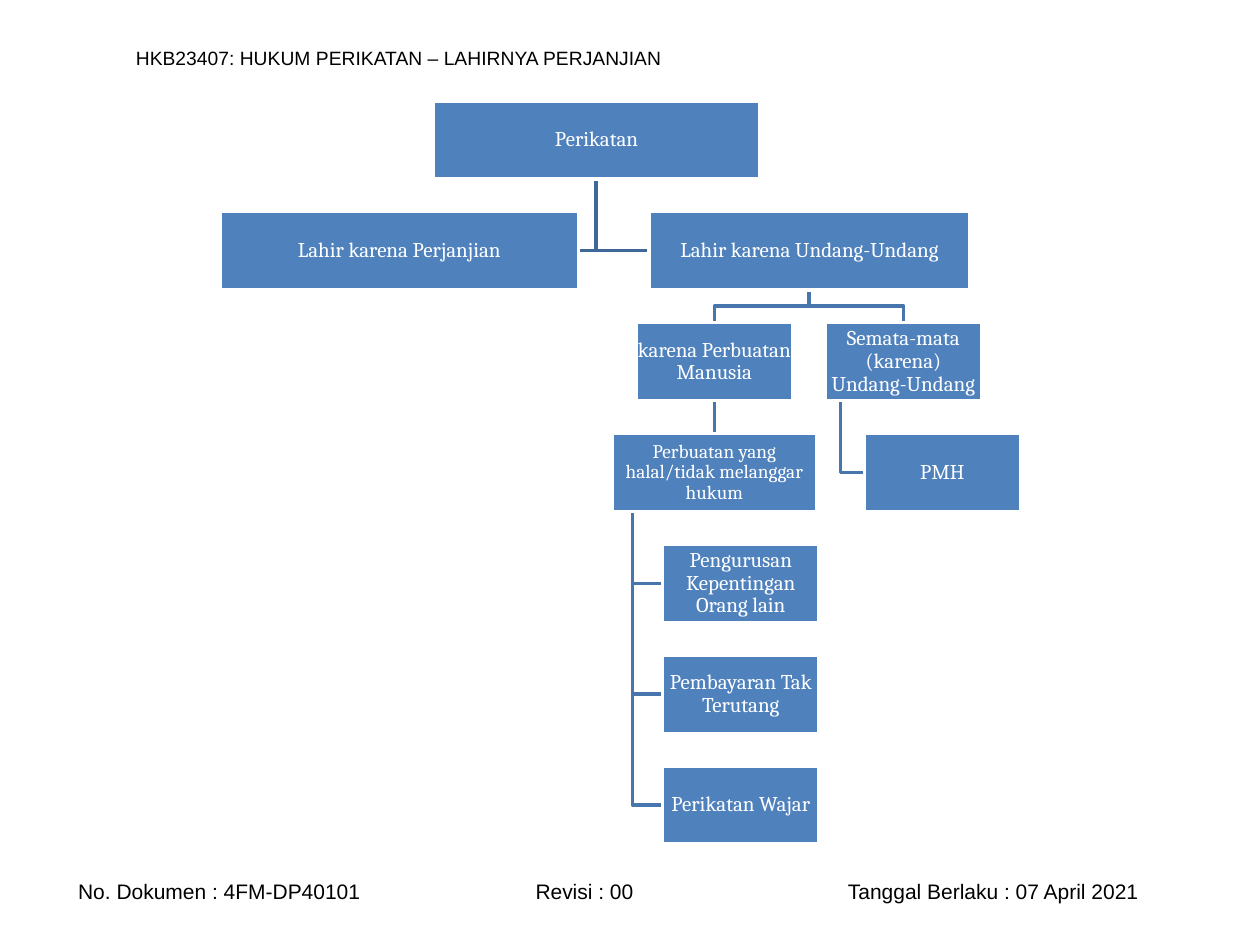
import dataclasses
import typing

import lxml.etree
import pptx
import pptx.dml.color
import pptx.enum.shapes
import pptx.enum.text
import pptx.oxml.ns
import pptx.util

UNIT = 9144  # EMU in one px, 100 px to the inch
TOP, STEP, TALL = 80, 88, 62

ALIGN = pptx.enum.text.PP_ALIGN
MID = pptx.enum.text.MSO_ANCHOR.MIDDLE
FIT = pptx.enum.text.MSO_AUTO_SIZE


@dataclasses.dataclass(frozen=True)
class Theme:
    box: str = "4F81BD"
    edge: str = "FFFFFF"
    label: str = "FFFFFF"
    trunk: str = "3F6797"
    wire: str = "4875AC"
    ink: str = "000000"
    sans: str = "Arial"
    serif: str = "Cambria"
    small: int = 11
    base: int = 12
    line: int = 2


THEME = Theme()


@dataclasses.dataclass(frozen=True)
class Box:
    text: str
    left: int
    row: int
    wide: int = 124
    size: int = THEME.base

    @property
    def top(self) -> int:
        return TOP + STEP * self.row

    @property
    def foot(self) -> int:
        return self.top + TALL

    @property
    def right(self) -> int:
        return self.left + self.wide

    @property
    def mid(self) -> int:
        return self.left + self.wide // 2

    @property
    def waist(self) -> int:
        return self.top + TALL // 2


ROOT = Box("Perikatan", 344, 0, 259)
DEAL = Box("Lahir karena Perjanjian", 175, 1, 284)
LAW = Box("Lahir karena Undang-Undang", 515, 1, 255)
ACT = Box("karena Perbuatan Manusia", 505, 2)
PURE = Box("Semata-mata (karena) Undang-Undang", 655, 2)
LEGAL = Box("Perbuatan yang halal/tidak melanggar hukum", 486, 3, 162, THEME.small)
TORT = Box("PMH", 686, 3)
CASES = [
    Box(text, 526, row)
    for row, text in enumerate(
        ["Pengurusan Kepentingan Orang lain", "Pembayaran Tak Terutang", "Perikatan Wajar"], 4
    )
]
BOXES = [ROOT, DEAL, LAW, ACT, LEGAL, *CASES, PURE, TORT]


def px(value: int) -> pptx.util.Emu:
    return pptx.util.Emu(value * UNIT)


def tint(code: str) -> pptx.dml.color.RGBColor:
    return pptx.dml.color.RGBColor.from_string(code)


def stroke(item: typing.Any, code: str) -> None:
    item.line.color.rgb = tint(code)
    item.line.width = pptx.util.Pt(THEME.line)


def write(
    shape: typing.Any,
    text: str,
    *,
    size: int,
    font: str,
    color: str,
    align: typing.Any,
    pads: tuple[int, int, int, int],
    space: float = 1.0,
    fit: typing.Any = FIT.NONE,
    tabs: tuple[int, ...] = (),
) -> None:
    """Fill a shape with one paragraph; pads run left, top, right, bottom."""
    frame = shape.text_frame
    frame.word_wrap = True
    frame.auto_size = fit
    frame.vertical_anchor = MID
    frame.margin_left, frame.margin_top, frame.margin_right, frame.margin_bottom = map(px, pads)
    para = frame.paragraphs[0]
    para.alignment = align
    para.line_spacing = space
    if tabs:
        stops = lxml.etree.SubElement(para._p.get_or_add_pPr(), pptx.oxml.ns.qn("a:tabLst"))
        for stop in tabs:
            lxml.etree.SubElement(
                stops, pptx.oxml.ns.qn("a:tab"), pos=str(px(stop)), algn="l"
            )
    run = para.add_run()
    run.text = text
    run.font.size = pptx.util.Pt(size)
    run.font.name = font
    run.font.color.rgb = tint(color)


def band(shapes: typing.Any, text: str, area: tuple[int, int, int, int], size: int,
         inset: int = 10, tabs: tuple[int, ...] = ()) -> None:
    """Add a line of page text at left, top, width, height."""
    write(shapes.add_textbox(*map(px, area)), text, size=size, font=THEME.sans,
          color=THEME.ink, align=ALIGN.JUSTIFY, pads=(inset, 5, 10, 5),
          fit=FIT.SHAPE_TO_FIT_TEXT, tabs=tabs)


def bend(shapes: typing.Any, code: str, *spots: tuple[int, int]) -> None:
    """Draw an open line through the given spots."""
    start, *rest = [(px(x), px(y)) for x, y in spots]
    path = shapes.build_freeform(*start, scale=1.0)
    path.add_line_segments(rest, close=False)
    shape = path.convert_to_shape()
    shape.shadow.inherit = False
    shape.fill.background()
    stroke(shape, code)


def hang(shapes: typing.Any, head: Box, child: Box) -> None:
    """Link the foot of a box to the left side of a child below it."""
    x = head.left + head.wide // 10
    bend(shapes, THEME.wire, (x, head.foot), (x, child.waist), (child.left, child.waist))


def fork(shapes: typing.Any, head: Box, child: Box) -> None:
    """Link the foot of a box to the top of a child, turning halfway."""
    half = (head.foot + child.top) // 2
    bend(shapes, THEME.wire, (head.mid, head.foot), (head.mid, half),
         (child.mid, half), (child.mid, child.top))


def draw(shapes: typing.Any, box: Box) -> typing.Any:
    shape = shapes.add_shape(
        pptx.enum.shapes.MSO_SHAPE.RECTANGLE, px(box.left), px(box.top), px(box.wide), px(TALL)
    )
    shape.shadow.inherit = False
    shape.fill.solid()
    shape.fill.fore_color.rgb = tint(THEME.box)
    stroke(shape, THEME.edge)
    write(shape, box.text, size=box.size, font=THEME.serif, color=THEME.label,
          align=ALIGN.CENTER, pads=(1, 1, 1, 1), space=0.9)
    return shape


def main() -> None:
    deck = pptx.Presentation()
    deck.slide_width, deck.slide_height = px(1000), px(750)
    shapes = deck.slides.add_slide(deck.slide_layouts[6]).shapes

    band(shapes, "HKB23407: HUKUM PERIKATAN – LAHIRNYA PERJANJIAN", (98, 31, 835, 29), THEME.small)
    band(shapes, "No. Dokumen : 4FM-DP40101\tRevisi : 00\tTanggal Berlaku : 07 April 2021",
         (20, 692, 945, 30), THEME.base, inset=42, tabs=(363, 611))

    hang(shapes, PURE, TORT)
    for case in reversed(CASES):
        hang(shapes, LEGAL, case)
    for child in (PURE, ACT):
        fork(shapes, LAW, child)
    for side in (LAW.left, DEAL.right):
        bend(shapes, THEME.trunk, (ROOT.mid, ROOT.foot), (ROOT.mid, LAW.waist), (side, LAW.waist))

    # Added before the boxes so that it lies behind their edges
    link = shapes.add_connector(
        pptx.enum.shapes.MSO_CONNECTOR.STRAIGHT,
        px(ACT.mid), px(ACT.foot), px(LEGAL.mid), px(LEGAL.top),
    )
    stroke(link, THEME.wire)
    lxml.etree.SubElement(link._element.spPr, pptx.oxml.ns.qn("a:effectLst"))

    drawn = {box: draw(shapes, box) for box in BOXES}
    link.begin_connect(drawn[ACT], 2)
    link.end_connect(drawn[LEGAL], 0)

    deck.save("out.pptx")


if __name__ == "__main__":
    main()
